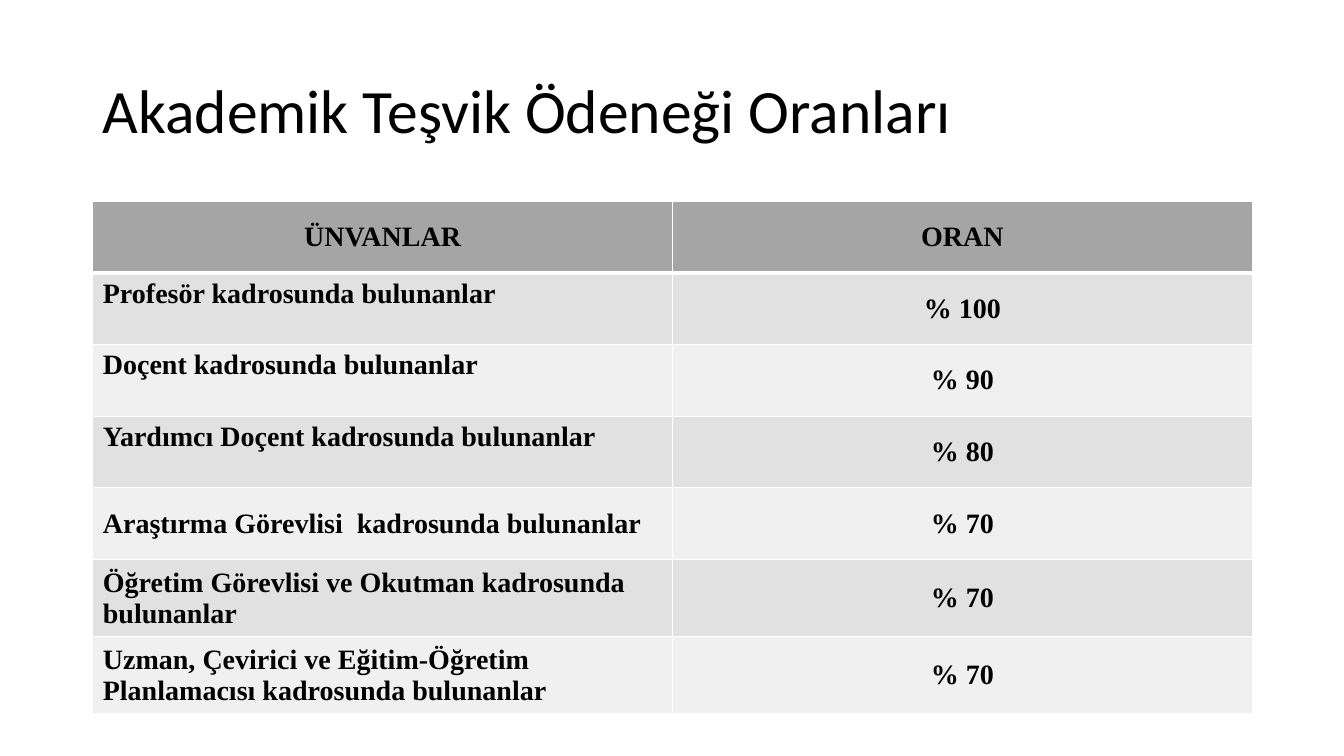
from dataclasses import dataclass

from lxml.etree import SubElement
from pptx import Presentation
from pptx.dml.color import RGBColor as Rgb
from pptx.enum.text import MSO_ANCHOR as Anchor, PP_ALIGN as Align
from pptx.oxml.ns import qn
from pptx.util import Inches, Pt


@dataclass(frozen=True)
class Theme:
    ink: str = "000000"
    head: str = "A5A5A5"
    bands: tuple[str, str] = ("E1E1E1", "F0F0F0")
    rule: str = "FFFFFF"
    title_font: str = "Calibri"
    cell_font: str = "Times New Roman"
    title_size: int = 44
    cell_size: int = 20
    thin: int = 1
    thick: int = 3


@dataclass(frozen=True)
class Rate:
    rank: str
    share: str
    anchor: Anchor = Anchor.MIDDLE


THEME = Theme()
LEFT, WIDTH = 0.92, 11.5
TOP, ROW = 2, 0.71
HEAD = Rate("ÜNVANLAR", "ORAN")
RATES = [
    Rate("Profesör kadrosunda bulunanlar", "% 100", Anchor.TOP),
    Rate("Doçent kadrosunda bulunanlar", "% 90", Anchor.TOP),
    Rate("Yardımcı Doçent kadrosunda bulunanlar", "% 80", Anchor.TOP),
    Rate("Araştırma Görevlisi  kadrosunda bulunanlar", "% 70"),
    Rate("Öğretim Görevlisi ve Okutman kadrosunda bulunanlar", "% 70"),
    Rate("Uzman, Çevirici ve Eğitim-Öğretim Planlamacısı kadrosunda bulunanlar", "% 70"),
]


def set_font(para, name: str, size: int, bold: bool = False) -> None:
    font = para.font
    font.name, font.size, font.bold = name, Pt(size), bold
    font.color.rgb = Rgb.from_string(THEME.ink)


def add_title(slide, text: str) -> None:
    box = slide.shapes.add_textbox(Inches(LEFT), Inches(0.4), Inches(WIDTH), Inches(1.45))
    frame = box.text_frame
    frame.word_wrap = True
    frame.vertical_anchor = Anchor.MIDDLE
    para = frame.paragraphs[0]
    para.text = text
    para.line_spacing = 0.9
    set_font(para, THEME.title_font, THEME.title_size)


def add_edges(cell, top: int, bottom: int) -> None:
    props = cell._tc.get_or_add_tcPr()
    for side, width in zip("LRTB", (THEME.thin, THEME.thin, top, bottom)):
        line = SubElement(props, qn(f"a:ln{side}"), w=str(Pt(width)))
        fill = SubElement(line, qn("a:solidFill"))
        SubElement(fill, qn("a:srgbClr"), val=THEME.rule)


def fill_cell(cell, text: str, color: str, anchor: Anchor, align: Align) -> None:
    cell.fill.solid()
    cell.fill.fore_color.rgb = Rgb.from_string(color)
    cell.vertical_anchor = anchor
    para = cell.text_frame.paragraphs[0]
    para.text = text
    para.alignment = align
    set_font(para, THEME.cell_font, THEME.cell_size, bold=True)


def add_rates(slide, rates: list[Rate]) -> None:
    rows = [HEAD, *rates]
    frame = slide.shapes.add_table(
        len(rows), 2, Inches(LEFT), Inches(TOP), Inches(WIDTH), Inches(ROW * len(rows))
    )
    table = frame.table
    for i, rate in enumerate(rows):
        table.rows[i].height = Inches(ROW)
        color = THEME.bands[(i - 1) % 2] if i else THEME.head
        top = THEME.thick if i == 1 else THEME.thin
        bottom = THEME.thin if i else THEME.thick
        rank, share = table.cell(i, 0), table.cell(i, 1)
        for cell in (rank, share):
            add_edges(cell, top, bottom)
        fill_cell(rank, rate.rank, color, rate.anchor, Align.LEFT if i else Align.CENTER)
        fill_cell(share, rate.share, color, Anchor.MIDDLE, Align.CENTER)


def main() -> None:
    deck = Presentation()
    deck.slide_width, deck.slide_height = Inches(13.33), Inches(7.5)
    slide = deck.slides.add_slide(deck.slide_layouts[6])
    add_title(slide, "Akademik Teşvik Ödeneği Oranları")
    add_rates(slide, RATES)
    deck.save("out.pptx")


if __name__ == "__main__":
    main()
